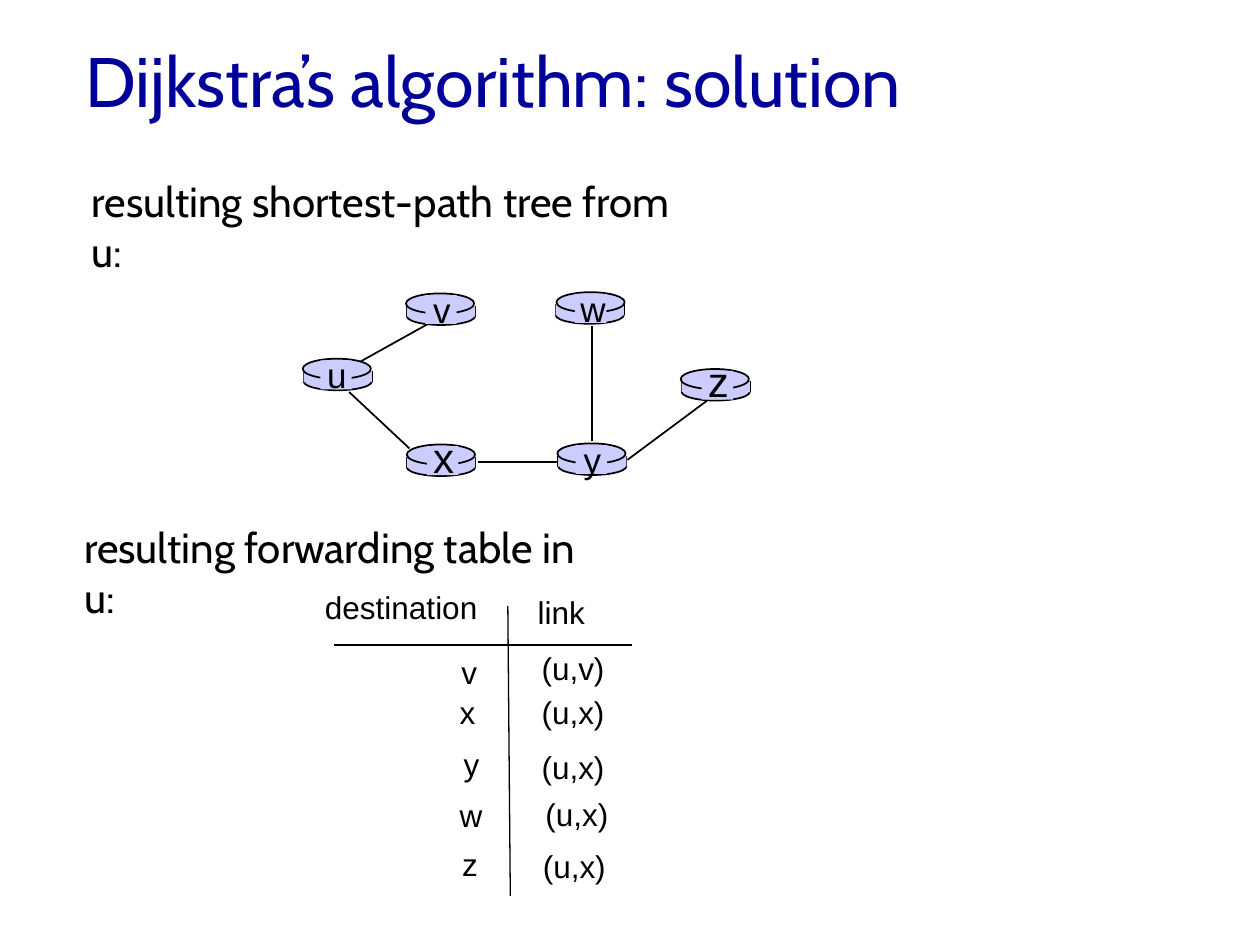
from lxml import etree
from pptx import Presentation
from pptx.dml.color import RGBColor
from pptx.enum.shapes import MSO_CONNECTOR as CONN, MSO_SHAPE as SHAPE
from pptx.enum.text import MSO_ANCHOR as ANCHOR, PP_ALIGN as ALIGN
from pptx.oxml.ns import qn
from pptx.util import Pt


def rgb(value):
    return RGBColor.from_string(value)


class Canvas:
    ink = "000000"
    title_color = "000099"
    node_fill = "CCCCFF"
    heading_font = "Cabin"
    body_font = "Arial"

    def __init__(self, slide):
        self.s = slide

    def text(self, x, y, w, h, words, size, font=None, color=None,
             align=ALIGN.LEFT, anchor=ANCHOR.TOP, wrap=False):
        tf = self.s.shapes.add_textbox(Pt(x), Pt(y), Pt(w), Pt(h)).text_frame
        tf.word_wrap = wrap
        tf.vertical_anchor = anchor
        p = tf.paragraphs[0]
        p.text = words
        p.alignment = align
        p.font.size = Pt(size)
        p.font.name = font or self.body_font
        p.font.color.rgb = rgb(color or self.ink)

    def heading(self, x, y, w, h, words, size=24, **style):
        self.text(x, y, w, h, words, size, self.heading_font, wrap=True, **style)

    def line(self, x1, y1, x2, y2, width=1):
        ln = self.s.shapes.add_connector(CONN.STRAIGHT, Pt(x1), Pt(y1), Pt(x2), Pt(y2))
        ln.line.color.rgb = rgb(self.ink)
        ln.line.width = Pt(width)
        etree.SubElement(ln._element.spPr, qn("a:effectLst"))

    def shape(self, kind, x, y, w, h, outlined=True):
        sp = self.s.shapes.add_shape(kind, Pt(x), Pt(y), Pt(w), Pt(h))
        sp.shadow.inherit = False
        sp.fill.solid()
        sp.fill.fore_color.rgb = rgb(self.node_fill)
        if outlined:
            sp.line.color.rgb = rgb(self.ink)
            sp.line.width = Pt(1)
        else:
            sp.line.fill.background()

    def router(self, x, y, rim_x):
        w = 39
        self.shape(SHAPE.OVAL, x, y, w, 10)
        for side in (x, x + w):
            self.line(side, y - 1, side, y + 5.3)
        self.shape(SHAPE.RECTANGLE, x, y - 1, w, 6.3, outlined=False)
        self.shape(SHAPE.OVAL, rim_x, y - 8, w, 11.5)

    def router_label(self, name, center, y, size):
        self.shape(SHAPE.RECTANGLE, center - 9, y - 7, 18, 16.5, outlined=False)
        rise, h = (19, 36) if size == 24 else (14.5, 31)
        self.text(center - 13, y - rise, 27, h, name, size, align=ALIGN.CENTER)


ROUTERS = [
    ("u", 173.5, 213, 173, 192, 20),
    ("x", 232.5, 262, 232.5, 253, 24),
    ("v", 232.5, 175.7, 232, 252, 20),
    ("w", 317.5, 175, 318, 337.5, 20),
    ("y", 319, 261.4, 318.5, 338, 20),
    ("z", 389.5, 218.9, 389, 410, 24),
]
TREE_LINKS = [
    (206, 206.6, 248.4, 183),
    (338.4, 186.5, 338.4, 252),
    (358.5, 262.8, 404, 229),
    (319, 264.2, 273, 264.2),
    (234, 256.3, 199.5, 224),
]
FORWARDING = [
    ("destination", 178.6, 332.6, 101.5, "link", 300.2, 335.5, 42),
    ("v", 256.5, 369.4, 24, "(u,v)", 302.4, 367.2, 50.4),
    ("x", 255.6, 392.4, 24, "(u,x)", 302.4, 392.4, 50.4),
    ("y", 257.8, 421.9, 24, "(u,x)", 302.4, 424.1, 50.4),
    ("w", 255.6, 451.4, 27.4, "(u,x)", 304.6, 450.7, 50.4),
    ("z", 257, 479.5, 24, "(u,x)", 303.1, 480.2, 50.4),
]


def main():
    prs = Presentation()
    prs.slide_width, prs.slide_height = Pt(720), Pt(540)
    c = Canvas(prs.slides.add_slide(prs.slide_layouts[6]))

    c.heading(41.8, 12.2, 612, 67, "Dijkstra’s algorithm: solution", 40,
              color=c.title_color, anchor=ANCHOR.MIDDLE)

    for link in TREE_LINKS:
        c.line(*link)
    for name, x, y, rim_x, center, size in ROUTERS:
        c.router(x, y, rim_x)
    for name, x, y, rim_x, center, size in ROUTERS:
        c.router_label(name, center, y, size)

    c.heading(45.4, 96.5, 360, 36, "resulting shortest-path tree from u:")
    c.heading(41, 294.5, 311, 36, "resulting forwarding table in u:")

    c.line(290.2, 346.3, 291.6, 511.9, 0.75)
    c.line(190.8, 368.6, 361.4, 368.6, 0.75)
    for dest, x, y, w, link, link_x, link_y, link_w in FORWARDING:
        c.text(x, y, w, 29, dest, 18)
        c.text(link_x, link_y, link_w, 29, link, 18)

    prs.save("out.pptx")


if __name__ == "__main__":
    main()
